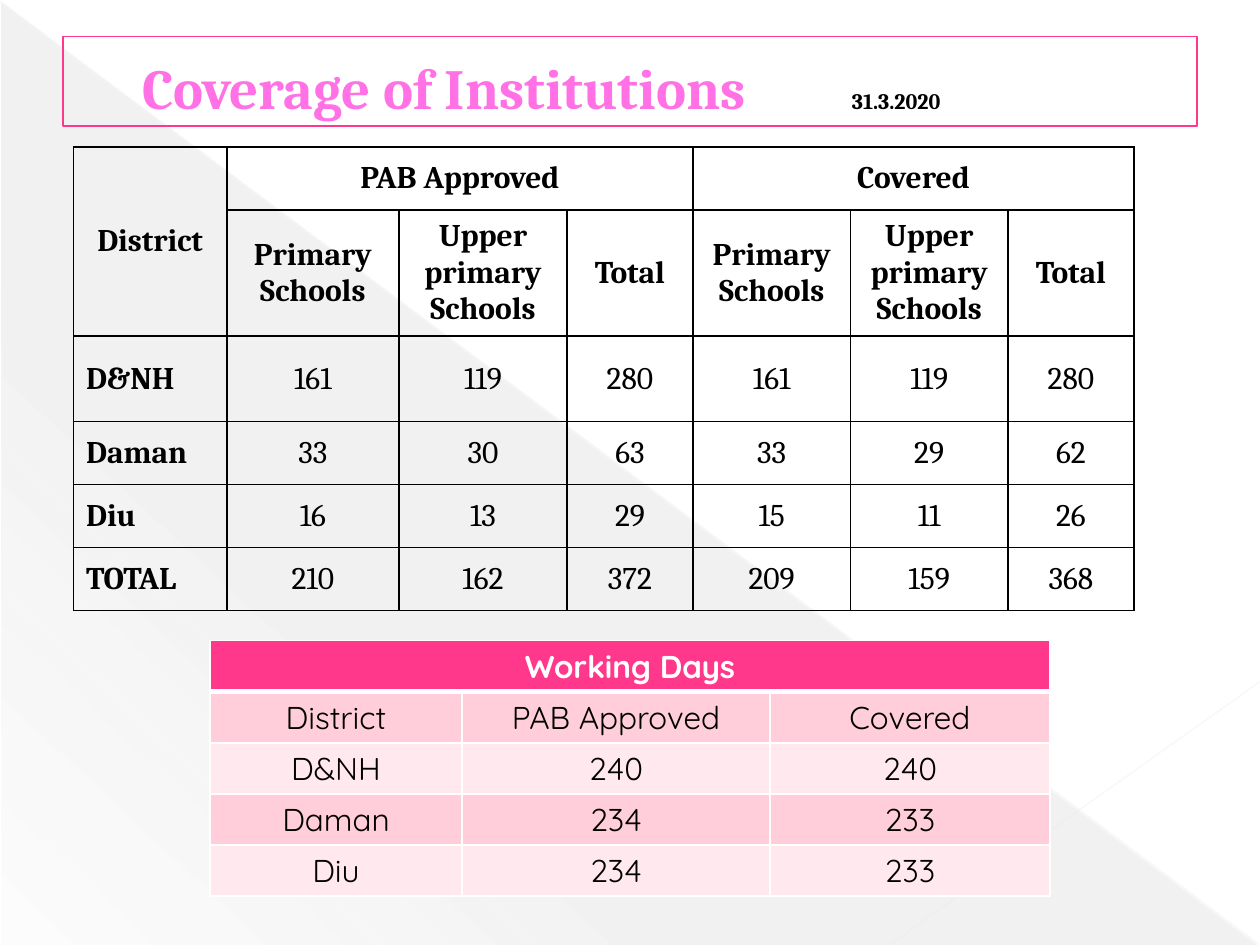
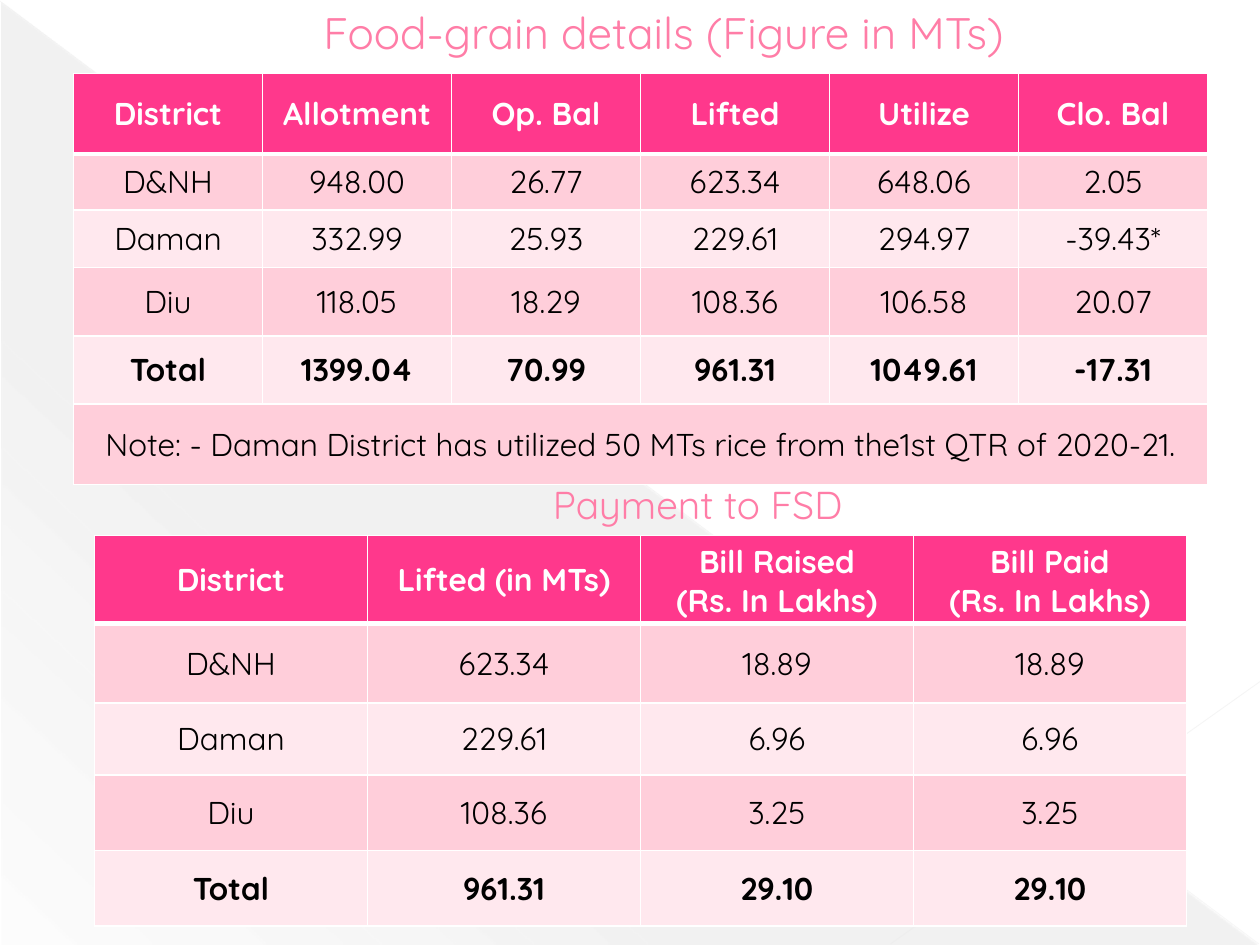
"""Build two slides on school coverage, working days, food-grain and payments."""
from dataclasses import dataclass

from lxml import etree
from pptx import Presentation
from pptx import util as u
from pptx.dml.color import RGBColor
from pptx.enum import shapes, text
from pptx.oxml import parse_xml
from pptx.oxml.ns import nsdecls, qn

Pt = u.Pt


@dataclass(frozen=True)
class Theme:
    serif: str = "Cambria"
    sans: str = "Quicksand"
    black: str = "000000"
    white: str = "FFFFFF"
    grey: str = "666666"
    pink: str = "FF388C"
    band_dark: str = "FFCEDA"
    band_light: str = "FFE8EE"
    orchid: str = "FF71E5"
    rose: str = "FF7DA7"
    outline: str = "B12761"
    cell_size: float = 18
    cover_size: float = 32.4
    gap_size: float = 39.6
    date_size: float = 12.6
    grain_size: float = 25.2
    payment_size: float = 22.2


theme = Theme()


def style_span(span, font, size, color, bold=False, outlined=False):
    """Format one run."""
    span.font.name = font
    span.font.size = Pt(size)
    span.font.bold = bold
    span.font.color.rgb = RGBColor.from_string(color)
    if outlined:
        span._r.get_or_add_rPr().insert(0, parse_xml(
            f'<a:ln {nsdecls("a")} w="6350"><a:solidFill>'
            f'<a:srgbClr val="{theme.outline}"/></a:solidFill></a:ln>'))


def add_grid(page, left, top, widths, heights, rows, merges=(), plain=False):
    """Add a table, either plain with black rules or banded in pink."""
    frame = page.shapes.add_table(len(rows), len(widths), Pt(left), Pt(top),
                                  Pt(sum(widths)), Pt(sum(heights)))
    table = frame.table
    table.first_row = table.horz_banding = False
    for column, width in zip(table.columns, widths):
        column.width = Pt(width)
    for row, height in zip(table.rows, heights):
        row.height = Pt(height)
    font = theme.serif if plain else theme.sans
    rule = theme.black if plain else theme.white
    for r, row in enumerate(rows):
        for c, value in enumerate(row):
            cell = table.cell(r, c)
            cell.text_frame.text = value
            cell.vertical_anchor = text.MSO_ANCHOR.MIDDLE
            if plain:
                cell.fill.background()
                bold = r < 2 or c == 0
                color = theme.black
            else:
                cell.fill.solid()
                bands = (theme.band_light, theme.band_dark)
                cell.fill.fore_color.rgb = RGBColor.from_string(
                    bands[r % 2] if r else theme.pink)
                bold = r == 0 or row[0] == "Total"
                color = theme.black if r else theme.white
            for para in cell.text_frame.paragraphs:
                left_aligned = plain and c == 0 and r > 1
                para.alignment = text.PP_ALIGN.LEFT if left_aligned else text.PP_ALIGN.CENTER
                for span in para.runs:
                    style_span(span, font, theme.cell_size, color, bold)
            for i, side in enumerate("LRTB"):
                under_header = not plain and (r, side) in ((0, "B"), (1, "T"))
                width = Pt(3 if under_header else 1)
                cell._tc.get_or_add_tcPr().insert(i, parse_xml(
                    f'<a:ln{side} {nsdecls("a")} w="{width}"><a:solidFill>'
                    f'<a:srgbClr val="{rule}"/></a:solidFill></a:ln{side}>'))
    for r1, c1, r2, c2 in merges:
        table.cell(r1, c1).merge(table.cell(r2, c2))


deck = Presentation()
deck.slide_width, deck.slide_height = Pt(720), Pt(540)

pages = []
for _ in range(2):
    page = deck.slides.add_slide(deck.slide_layouts[6])
    pages.append(page)
    wedge = page.shapes.add_shape(shapes.MSO_SHAPE.RIGHT_TRIANGLE,
                                  Pt(0.7), Pt(1.4), Pt(718.6), Pt(538.6))
    wedge.shadow.inherit = False
    wedge.line.fill.background()
    stops = "".join(
        f'<a:gs pos="{position * 1000}"><a:srgbClr val="{theme.grey}">'
        f'<a:alpha val="{alpha * 1000}"/></a:srgbClr></a:gs>'
        for position, alpha in ((0, 10), (70, 8), (100, 1)))
    wedge._element.spPr.find(qn("a:prstGeom")).addnext(parse_xml(
        f'<a:gradFill {nsdecls("a")} rotWithShape="1"><a:gsLst>{stops}</a:gsLst>'
        f'<a:lin ang="{133 * 60000}" scaled="0"/></a:gradFill>'))
    for x1, y1, x2, y2, color, width, alpha in (
            (0, 0.7, 719.3, 539.3, "E8E8E8", 0.39, 35),
            (720, 389.5, 509, 539.3, "EAEAEA", 0.47, 45)):
        crease = page.shapes.add_connector(shapes.MSO_CONNECTOR.STRAIGHT,
                                           Pt(x1), Pt(y1), Pt(x2), Pt(y2))
        crease.line.width = Pt(width)
        crease.line.color.rgb = RGBColor.from_string(color)
        properties = crease._element.spPr
        etree.SubElement(properties.find(".//" + qn("a:srgbClr")),
                         qn("a:alpha"), val=str(alpha * 1000))
        etree.SubElement(properties, qn("a:effectLst"))

coverage_page, grain_page = pages

titles = (
    (coverage_page, (36, 21, 648, 51), 45.4, text.PP_ALIGN.LEFT,
     (("Coverage of Institutions", theme.serif, theme.cover_size, theme.orchid, True),
      ("\t", theme.serif, theme.gap_size, theme.orchid, True),
      ("31.3.2020", theme.serif, theme.date_size, theme.black, True))),
    (grain_page, (36, 0, 648, 36), 45.4, text.PP_ALIGN.CENTER,
     (("Food-grain details (Figure in MTs)", theme.sans, theme.grain_size, theme.rose, False),)),
    (grain_page, (54, 270, 648, 36), 262, text.PP_ALIGN.LEFT,
     (("Payment to FSD", theme.sans, theme.payment_size, theme.rose, False),)),
)
for page, place, inset, alignment, spans in titles:
    box = page.shapes.add_textbox(*map(Pt, place))
    frame = box.text_frame
    frame.word_wrap = True
    frame.vertical_anchor = text.MSO_ANCHOR.MIDDLE
    frame.margin_left = Pt(inset)
    para = frame.paragraphs[0]
    para.alignment = alignment
    for words, font, size, color, bold in spans:
        span = para.add_run()
        span.text = words
        style_span(span, font, size, color, bold, outlined=True)
    if page is coverage_page:
        box.line.color.rgb = RGBColor.from_string(theme.pink)
        box.line.width = Pt(0.75)
        para._p.get_or_add_pPr().append(parse_xml(
            f'<a:tabLst {nsdecls("a")}><a:tab pos="{Pt(405.4)}" algn="l"/></a:tabLst>'))

school_heads = ("Primary Schools", "Upper primary Schools", "Total")
add_grid(
    coverage_page, 42, 84, (87.6, 98.4, 96, 72, 90, 90, 72), (36, 72, 49, 36, 36, 36),
    (("District", "PAB Approved", "", "", "Covered", "", ""),
     ("", *school_heads, *school_heads),
     ("D&NH", "161", "119", "280", "161", "119", "280"),
     ("Daman", "33", "30", "63", "33", "29", "62"),
     ("Diu", "16", "13", "29", "15", "11", "26"),
     ("TOTAL", "210", "162", "372", "209", "159", "368")),
    merges=((0, 0, 1, 0), (0, 1, 0, 3), (0, 4, 0, 6)), plain=True)

add_grid(
    coverage_page, 120, 366, (144, 176, 160), (29.25,) * 5,
    (("Working Days", "", ""),
     ("District", "PAB Approved", "Covered"),
     ("D&NH", "240", "240"),
     ("Daman", "234", "233"),
     ("Diu", "234", "233")),
    merges=((0, 0, 0, 2),))

add_grid(
    grain_page, 42, 42, (108,) * 6, (46, 32, 33, 39, 39, 46),
    (("District", "Allotment", "Op. Bal", "Lifted", "Utilize", "Clo. Bal"),
     ("D&NH", "948.00", "26.77", "623.34", "648.06", "2.05"),
     ("Daman", "332.99", "25.93", "229.61", "294.97", "-39.43*"),
     ("Diu", "118.05", "18.29", "108.36", "106.58", "20.07"),
     ("Total", "1399.04", "70.99", "961.31", "1049.61", "-17.31"),
     ("Note: - Daman District has utilized 50 MTs rice from the1st QTR of 2020-21.",
      "", "", "", "", "")),
    merges=((5, 0, 5, 5),))

add_grid(
    grain_page, 54, 306, (156,) * 4, (47.5, 45.4, 41, 43.2, 43.2),
    (("District", "Lifted (in MTs)", "Bill Raised\n(Rs. In Lakhs)", "Bill Paid\n(Rs. In Lakhs)"),
     ("D&NH", "623.34", "18.89", "18.89"),
     ("Daman", "229.61", "6.96", "6.96"),
     ("Diu", "108.36", "3.25", "3.25"),
     ("Total", "961.31", "29.10", "29.10")))

deck.save("out.pptx")
